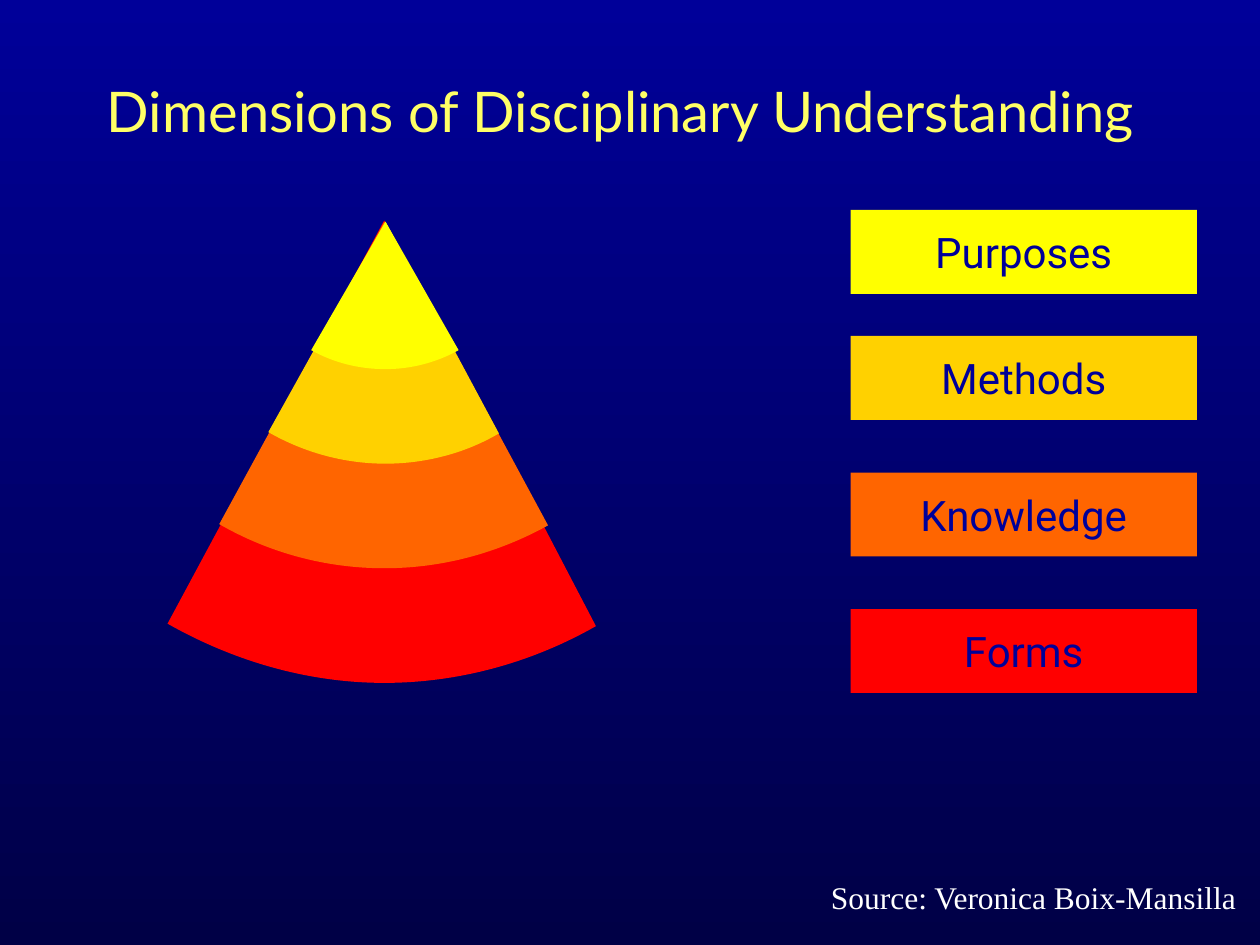
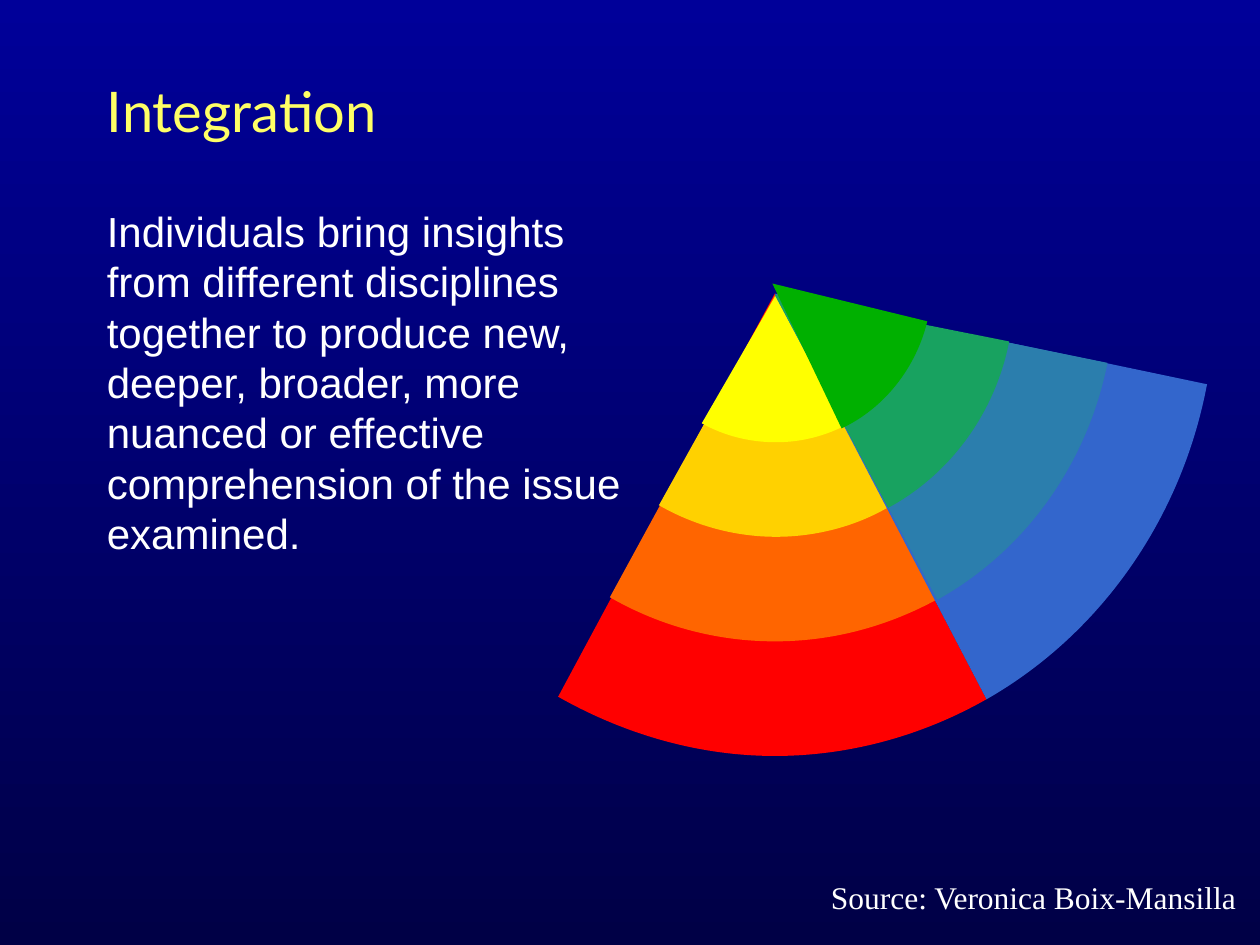
from lxml import etree
from pptx import Presentation
from pptx.util import Inches, Pt
from pptx.dml.color import RGBColor
from pptx.enum.shapes import MSO_SHAPE
from pptx.enum.text import MSO_ANCHOR, PP_ALIGN
from pptx.oxml.ns import qn

RECT = MSO_SHAPE.RECTANGLE
TOP, MIDDLE = MSO_ANCHOR.TOP, MSO_ANCHOR.MIDDLE
LEFT, CENTER, RIGHT = PP_ALIGN.LEFT, PP_ALIGN.CENTER, PP_ALIGN.RIGHT

HEX = {
    "sky": "000099", "night": "000046", "title": "FFFF66", "white": "FFFFFF",
    "red": "FF0000", "orange": "FF6500", "gold": "FFD100", "yellow": "FFFF00",
    "blue": "3366CC", "teal": "2B7EAD", "sea": "18A260", "green": "00B000",
}
RGB = {name: RGBColor.from_string(code) for name, code in HEX.items()}

# Text styles: font, then colour, alignment, anchor and wrap
STYLES = {
    "title": ({"name": "Lato", "size": Pt(32)}, "title", LEFT, MIDDLE, True),
    "label": ({"name": "Roboto", "size": Pt(24)}, "sky", CENTER, MIDDLE, False),
    "body": ({"name": "Arial", "size": Pt(24)}, "white", LEFT, TOP, True),
    "source": ({"name": "Times New Roman", "size": Pt(18)}, "white", RIGHT, TOP, False),
}

# Bands of each wedge: colour, apex shift, and the outer edge as Bezier
# points measured from the apex, right end first
WARM = [
    ("red", (0, 0), [(1.68, 3.22), (1.17, 3.51), (0.59, 3.67), (0, 3.67),
                     (-0.6, 3.67), (-1.19, 3.5), (-1.72, 3.2)]),
    ("orange", (0, 0.01), [(1.3, 2.41), (0.9, 2.63), (0.46, 2.75), (0, 2.75),
                           (-0.46, 2.75), (-0.91, 2.63), (-1.31, 2.4)]),
    ("gold", (0.01, 0.01), [(0.9, 1.68), (0.63, 1.84), (0.31, 1.92), (0, 1.92),
                            (-0.33, 1.92), (-0.65, 1.83), (-0.93, 1.67)]),
    ("yellow", (0.01, 0.01), [(0.58, 1.02), (0.4, 1.12), (0.2, 1.17), (0, 1.17),
                              (-0.21, 1.17), (-0.41, 1.12), (-0.59, 1.02)]),
]
COOL = [
    ("blue", (0, 0), [(3.43, 0.72), (3.23, 1.78), (2.59, 2.7), (1.68, 3.22)]),
    ("teal", (0, 0.01), [(2.64, 0.54), (2.48, 1.34), (1.99, 2.03), (1.29, 2.42)]),
    ("sea", (0, 0.01), [(1.86, 0.37), (1.75, 0.93), (1.4, 1.42), (0.9, 1.69)]),
    ("green", (-0.02, -0.08), [(1.23, 0.3), (1.14, 0.67), (0.89, 0.99), (0.55, 1.15)]),
]


def write(shape, text, style):
    font, color, align, anchor, wrap = STYLES[style]
    frame = shape.text_frame
    frame.word_wrap = wrap
    frame.vertical_anchor = anchor
    para = frame.paragraphs[0]
    para.alignment = align
    run = para.add_run()
    run.text = text
    for key, value in font.items():
        setattr(run.font, key, value)
    run.font.color.rgb = RGB[color]
    return para


def paint(shape, color):
    shape.shadow.inherit = False
    shape.fill.solid()
    shape.fill.fore_color.rgb = RGB[color]
    shape.line.fill.background()


deck = Presentation()
deck.slide_width, deck.slide_height = Inches(10), Inches(7.5)

# Shared background, title, wedges and source line
PAGES = [
    ("Dimensions of Disciplinary Understanding", (3.05, 1.75), WARM),
    ("Integration", (6.15, 2.33), WARM + COOL),
]
slides = []
for title, apex, bands in PAGES:
    slide = deck.slides.add_slide(deck.slide_layouts[6])
    slides.append(slide)

    back = slide.background.fill
    back.gradient()
    back.gradient_angle = 270
    for stop, color in zip(back.gradient_stops, ("sky", "night")):
        stop.color.rgb = RGB[color]

    box = slide.shapes.add_textbox(Inches(0.75), Inches(0.25), Inches(8.5), Inches(1.25))
    write(box, title, "title")

    for color, shift, edge in bands:
        x, y = apex[0] + shift[0], apex[1] + shift[1]
        outline = slide.shapes.build_freeform(Inches(x), Inches(y))
        outline.add_line_segments([(Inches(x + dx), Inches(y + dy)) for dx, dy in edge])
        wedge = outline.convert_to_shape()
        paint(wedge, color)
        # Turn each three points after the first side into one curve
        lines = list(wedge.element.iter(qn("a:lnTo")))[1:]
        for first in range(0, len(lines), 3):
            curve = etree.Element(qn("a:cubicBezTo"))
            lines[first].addprevious(curve)
            for line in lines[first:first + 3]:
                curve.append(line[0])
                line.getparent().remove(line)

    box = slide.shapes.add_textbox(Inches(6.46), Inches(6.92), Inches(3.45), Inches(0.4))
    write(box, "Source: Veronica Boix-Mansilla", "source")

# Slide 1: key to the bands, tops in twelfths of an inch
KEY = [("Forms", "red", 58), ("Knowledge", "orange", 45),
       ("Methods", "gold", 32), ("Purposes", "yellow", 20)]
for text, color, top in KEY:
    box = slides[0].shapes.add_shape(RECT, Inches(6.75), Inches(top / 12),
                                     Inches(2.75), Inches(8 / 12))
    paint(box, color)
    write(box, text, "label")

# Slide 2: body text
box = slides[1].shapes.add_textbox(Inches(0.75), Inches(1.58), Inches(4.56), Inches(3.49))
para = write(box, "Individuals bring insights from different disciplines together to "
             "produce new, deeper, broader, more nuanced or effective comprehension "
             "of the issue examined.", "body")
para.line_spacing = Pt(28.8)

deck.save("out.pptx")
